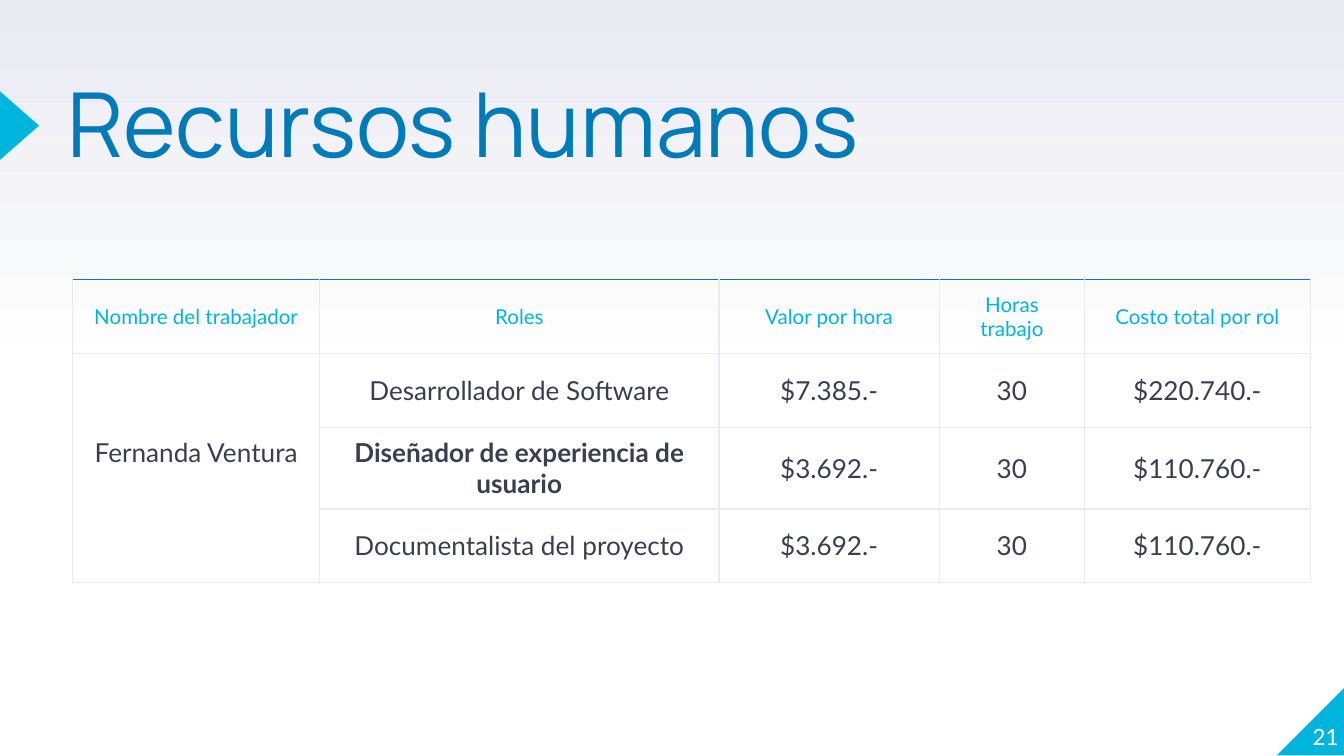
from lxml import etree
from pptx import Presentation
from pptx.dml.color import RGBColor
from pptx.enum.shapes import MSO_SHAPE as SHAPE
from pptx.enum.text import MSO_ANCHOR as ANCHOR, PP_ALIGN as ALIGN
from pptx.oxml.ns import qn
from pptx.util import Inches, Pt

WHITE = RGBColor(0xFF, 0xFF, 0xFF)
LILAC = RGBColor(0xE9, 0xEA, 0xF2)
CYAN = RGBColor(0x00, 0xB5, 0xDD)
BLUE = RGBColor(0x00, 0x7B, 0xB9)
INK = RGBColor(0x3A, 0x3F, 0x50)

NO_TABLE_STYLE = "{2D5ABB26-0587-4C30-8999-92F81FD0307C}"
COLUMN_WIDTHS = [1.84, 2.97, 1.64, 1.08, 1.68]
ROW_HEIGHT = 0.55
ROWS = [
    ["Nombre del trabajador", "Roles", "Valor por hora", "Horas trabajo", "Costo total por rol"],
    ["Fernanda Ventura", "Desarrollador de Software", "$7.385.-", "30", "$220.740.-"],
    ["", "Diseñador de experiencia de usuario", "$3.692.-", "30", "$110.760.-"],
    ["", "Documentalista del proyecto", "$3.692.-", "30", "$110.760.-"],
]
BOLD_CELL = (2, 1)


def write(tf, text, size, color, font="Lato", bold=False, align=ALIGN.LEFT, spacing=None):
    p = tf.paragraphs[0]
    p.alignment = align
    if spacing:
        p.line_spacing = spacing
    r = p.add_run()
    r.text = text
    r.font.name = font
    r.font.size = Pt(size)
    r.font.bold = bold
    r.font.color.rgb = color


def add_text(s, box, text, anchor=ANCHOR.TOP, **fmt):
    tf = s.shapes.add_textbox(*map(Inches, box)).text_frame
    tf.word_wrap = True
    tf.vertical_anchor = anchor
    tf.margin_left = tf.margin_top = tf.margin_right = tf.margin_bottom = 0
    write(tf, text, **fmt)


def add_triangle(s, kind, box, rotation):
    sp = s.shapes.add_shape(kind, *map(Inches, box))
    sp.rotation = rotation
    sp.shadow.inherit = False
    sp.fill.solid()
    sp.fill.fore_color.rgb = CYAN
    sp.line.fill.background()


def set_borders(cell, top):
    tc_pr = cell._tc.get_or_add_tcPr()
    for side, color in (("L", LILAC), ("R", LILAC), ("T", top), ("B", LILAC)):
        ln = etree.SubElement(tc_pr, qn(f"a:ln{side}"), w=str(Pt(0.75)), cap="flat", cmpd="sng")
        fill = etree.SubElement(ln, qn("a:solidFill"))
        etree.SubElement(fill, qn("a:srgbClr"), val=str(color))
        etree.SubElement(ln, qn("a:prstDash"), val="solid")


def paint_background(s):
    fill = s.background.fill
    fill.gradient()
    fill.gradient_angle = 90
    for stop, position, color in zip(fill.gradient_stops, (0.5, 1), (WHITE, LILAC)):
        stop.position = position
        stop.color.rgb = color


def add_title(s, left, top, width, height):
    add_triangle(s, SHAPE.ISOSCELES_TRIANGLE, (left - 0.61, top + 0.13, 0.51, 0.29), 90)
    add_text(s, (left, top, width, height), "Recursos humanos",
             size=48, color=BLUE, font="Manrope", spacing=0.8)


def add_cost_table(s, left, top):
    box = (left, top, sum(COLUMN_WIDTHS), ROW_HEIGHT * len(ROWS))
    table = s.shapes.add_table(len(ROWS), len(COLUMN_WIDTHS), *map(Inches, box)).table
    table.first_row = table.horz_banding = False
    table._tbl.tblPr.find(qn("a:tableStyleId")).text = NO_TABLE_STYLE
    for column, width in zip(table.columns, COLUMN_WIDTHS):
        column.width = Inches(width)
    for i, row in enumerate(ROWS):
        table.rows[i].height = Inches(ROW_HEIGHT)
        header = i == 0
        for j, text in enumerate(row):
            cell = table.cell(i, j)
            set_borders(cell, BLUE if header else LILAC)
            cell.fill.background()
            cell.vertical_anchor = ANCHOR.MIDDLE
            cell.margin_left = cell.margin_right = Inches(0.1)
            cell.margin_top = cell.margin_bottom = Inches(0.07)
            if text:
                write(cell.text_frame, text, size=11 if header else 14,
                      color=CYAN if header else INK,
                      bold=(i, j) == BOLD_CELL, align=ALIGN.CENTER)
    worker = table.cell(1, 0)
    worker.merge(table.cell(len(ROWS) - 1, 0))
    worker.margin_bottom = Inches(0.3)


def add_page_number(s, left, top, side):
    add_triangle(s, SHAPE.RIGHT_TRIANGLE, (left, top, side, side), 270)
    add_text(s, (left - 0.04, top - 0.04, 0.5, side), "21", anchor=ANCHOR.BOTTOM,
             size=12, color=WHITE, align=ALIGN.RIGHT)


def main():
    prs = Presentation()
    prs.slide_width = Inches(10)
    prs.slide_height = prs.slide_width * 9 // 16
    s = prs.slides.add_slide(prs.slide_layouts[6])
    paint_background(s)
    add_title(s, 0.5, 0.66, 9.28, 1.18)
    add_cost_table(s, 0.54, 2.08)
    add_page_number(s, 9.5, 5.11, 0.51)
    prs.save("out.pptx")


if __name__ == "__main__":
    main()
